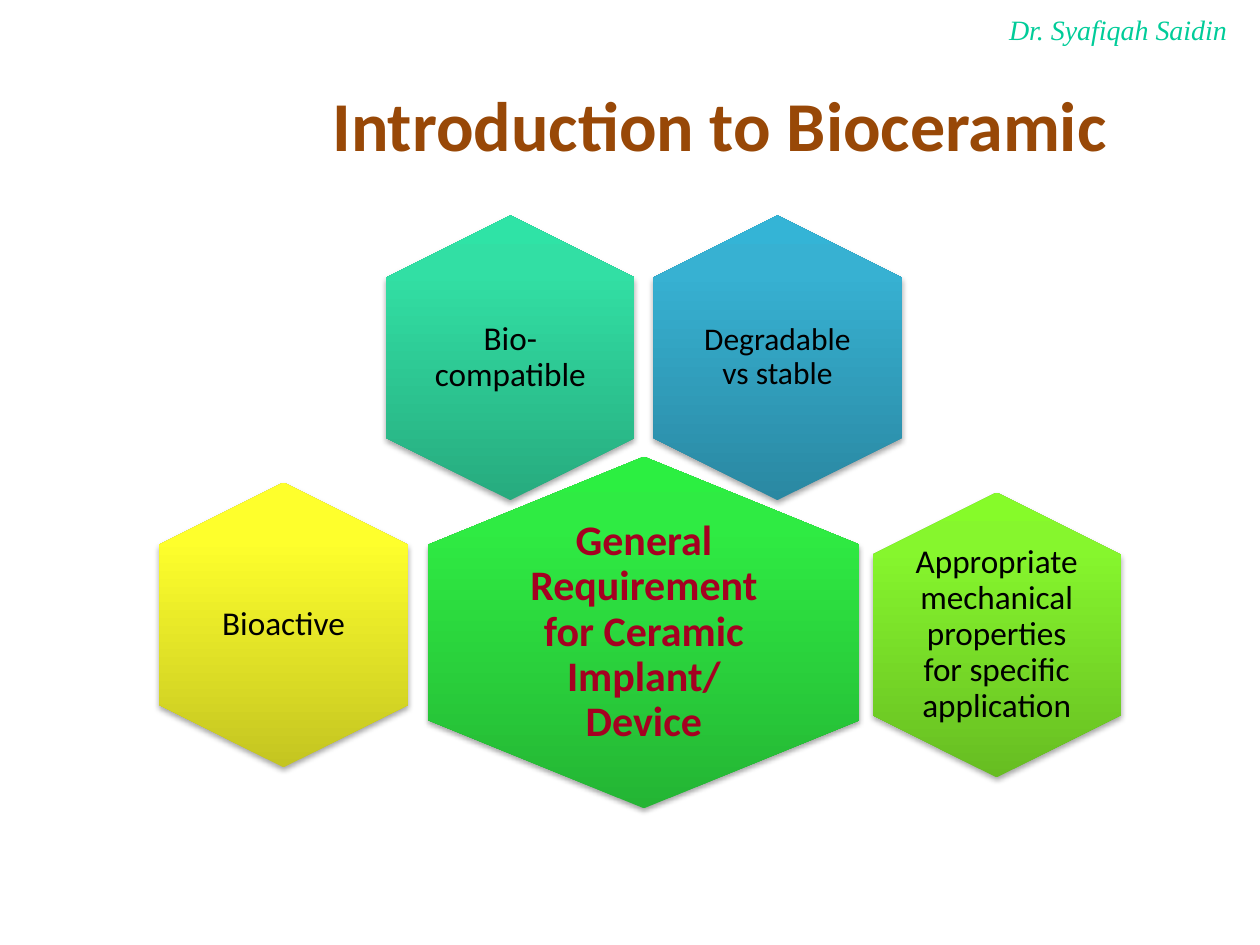
from dataclasses import dataclass

import pptx
import pptx.dml.color
import pptx.enum.shapes
import pptx.enum.text
import pptx.oxml
import pptx.oxml.ns
import pptx.slide
import pptx.util
from pptx.dml.color import RGBColor
from pptx.util import Inches

BROWN = RGBColor(0x98, 0x48, 0x07)
TEAL = RGBColor(0x00, 0xCC, 0x99)
BLACK = RGBColor(0x00, 0x00, 0x00)
CRIMSON = RGBColor(0xA5, 0x00, 0x21)

BLUES = (RGBColor(0x2A, 0x88, 0xA2), RGBColor(0x37, 0xB1, 0xD2), RGBColor(0x34, 0xB4, 0xD6))
SEA_GREENS = (RGBColor(0x27, 0xAB, 0x7E), RGBColor(0x32, 0xDF, 0xA4), RGBColor(0x2F, 0xE3, 0xA6))
GREENS = (RGBColor(0x24, 0xB5, 0x34), RGBColor(0x2F, 0xEB, 0x43), RGBColor(0x2C, 0xEF, 0x41))
LIMES = (RGBColor(0x67, 0xBD, 0x22), RGBColor(0x86, 0xF6, 0x2D), RGBColor(0x86, 0xFB, 0x29))
YELLOWS = (RGBColor(0xC4, 0xC5, 0x21), RGBColor(0xFE, 0xFF, 0x2C), RGBColor(0xFE, 0xFF, 0x2D))
STOPS = (0, 80, 100)


@dataclass
class Cell:
    """A hexagon and its label, which share a centre; lengths in inches."""
    text: str
    cx: float
    cy: float
    colors: tuple[RGBColor, RGBColor, RGBColor]
    size: int = 19
    inset: float = 0
    # Hexagon width and height before the quarter turn
    hexagon: tuple[float, float] = (2.26, 1.97)
    label: tuple[float, float] = (1.35, 1.56)
    color: RGBColor = BLACK
    bold: bool = False


CELLS = [
    Cell("Degradable vs stable", 6.17, 2.84, BLUES, size=18, inset=0.07),
    Cell("Bio-compatible", 4.05, 2.84, SEA_GREENS),
    Cell("General Requirement for Ceramic Implant/ Device", 5.11, 5.02, GREENS,
         size=24, inset=0.1, hexagon=(2.79, 3.42), label=(2.28, 1.86),
         color=CRIMSON, bold=True),
    Cell("Appropriate mechanical properties for specific application", 7.91, 5.04, LIMES),
    Cell("Bioactive", 2.25, 4.96, YELLOWS, inset=0.08),
]


def centred(cell: Cell, size: tuple[float, float]) -> list[pptx.util.Length]:
    w, h = size
    return [Inches(v) for v in (cell.cx - w / 2, cell.cy - h / 2, w, h)]


def add_hexagon(s: pptx.slide.Slide, cell: Cell) -> None:
    sp = s.shapes.add_shape(pptx.enum.shapes.MSO_SHAPE.HEXAGON, *centred(cell, cell.hexagon))
    sp.rotation = 90
    sp.line.fill.background()
    sp.fill.gradient()
    sp.shadow.inherit = False
    ns = pptx.oxml.ns.nsdecls("a")
    stops = "".join(f'<a:gs pos="{pos * 1000}"><a:srgbClr val="{color}"/></a:gs>'
                    for pos, color in zip(STOPS, cell.colors))
    spPr = sp._element.spPr
    spPr.replace(spPr.find(pptx.oxml.ns.qn("a:gradFill")), pptx.oxml.parse_xml(
        f'<a:gradFill {ns} rotWithShape="0"><a:gsLst>{stops}</a:gsLst>'
        '<a:lin ang="16200000" scaled="0"/></a:gradFill>'))
    spPr.find(pptx.oxml.ns.qn("a:effectLst")).append(pptx.oxml.parse_xml(
        f'<a:outerShdw {ns} blurRad="40000" dist="23000" dir="5400000" rotWithShape="0">'
        '<a:srgbClr val="000000"><a:alpha val="35000"/></a:srgbClr></a:outerShdw>'))


def add_label(s: pptx.slide.Slide, cell: Cell) -> None:
    tf = s.shapes.add_textbox(*centred(cell, cell.label)).text_frame
    tf.word_wrap = True
    tf.vertical_anchor = pptx.enum.text.MSO_ANCHOR.MIDDLE
    tf.margin_left = tf.margin_right = tf.margin_top = tf.margin_bottom = Inches(cell.inset)
    tf.text = cell.text
    p = tf.paragraphs[0]
    p.alignment = pptx.enum.text.PP_ALIGN.CENTER
    p.line_spacing = 0.9
    font = p.runs[0].font
    font.name, font.size, font.bold = "Calibri", pptx.util.Pt(cell.size), cell.bold
    font.color.rgb = cell.color


def add_heading(s: pptx.slide.Slide, text: str, box: tuple[float, float, float, float],
                name: str, size: int, color: RGBColor,
                bold: bool = False, italic: bool = False) -> None:
    """Add a one-line text box that fits its text."""
    tf = s.shapes.add_textbox(*map(Inches, box)).text_frame
    tf.word_wrap = False
    tf.auto_size = pptx.enum.text.MSO_AUTO_SIZE.SHAPE_TO_FIT_TEXT
    tf.text = text
    font = tf.paragraphs[0].runs[0].font
    font.name, font.size = name, pptx.util.Pt(size)
    font.bold, font.italic = bold, italic
    font.color.rgb = color


def main() -> None:
    prs = pptx.Presentation()
    prs.slide_width, prs.slide_height = Inches(10), Inches(7.5)
    s = prs.slides.add_slide(prs.slide_layouts[6])
    add_heading(s, "Introduction to Bioceramic", (2.54, 0.6, 6.42, 0.77),
                "Calibri", 40, BROWN, bold=True)
    add_heading(s, "Dr. Syafiqah Saidin", (7.91, 0.05, 2.01, 0.37),
                "Times New Roman", 16, TEAL, italic=True)
    for cell in CELLS:
        add_hexagon(s, cell)
        add_label(s, cell)
    prs.save("out.pptx")


if __name__ == "__main__":
    main()
